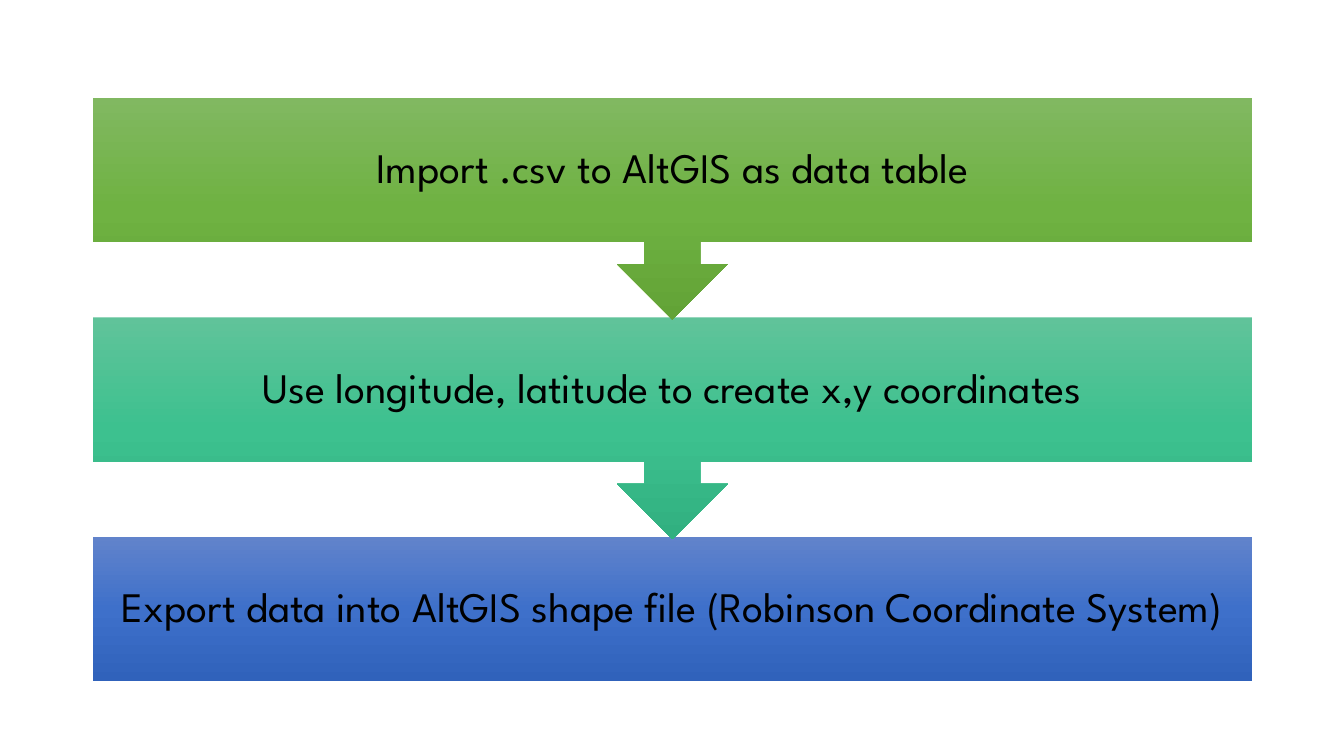
from copy import deepcopy

from pptx import Presentation
from pptx.dml.color import RGBColor
from pptx.enum.shapes import MSO_SHAPE
from pptx.enum.text import MSO_ANCHOR, PP_ALIGN
from pptx.oxml.ns import qn
from pptx.util import Inches, Pt

COLORS = {
    "green": ("81B861", "6FB242", "62A336"),
    "teal": ("60C39A", "3DC18F", "31B080"),
    "blue": ("6183CB", "3E70CA", "3062BB"),
    "text": "000000",
}
STEPS = [
    ("Import .csv to AltGIS as data table", "green"),
    ("Use longitude, latitude to create x,y coordinates", "teal"),
    ("Export data into AltGIS shape file (Robinson Coordinate System)", "blue"),
]
LEFT, TOP, WIDTH = 0.92, 0.97, 11.5
BOX_HEIGHT, CALLOUT_HEIGHT, PITCH = 1.43, 2.2, 2.18


def fill_gradient(shape, colors):
    """Fill from top to bottom with three evenly spaced colours."""
    shape.fill.gradient()
    shape.fill.gradient_angle = 270
    stop_list = shape._element.spPr.find(qn("a:gradFill")).find(qn("a:gsLst"))
    stop_list.append(deepcopy(stop_list[-1]))
    for index, stop in enumerate(shape.fill.gradient_stops):
        stop.position = index / 2
        stop.color.rgb = RGBColor.from_string(colors[index])


def write_text(shape, text, *, size, font, color, inset):
    frame = shape.text_frame
    frame.word_wrap = True
    frame.vertical_anchor = MSO_ANCHOR.MIDDLE
    frame.margin_left = frame.margin_right = Inches(inset)
    frame.margin_top = frame.margin_bottom = Inches(inset)
    para = frame.paragraphs[0]
    para.alignment = PP_ALIGN.CENTER
    para.line_spacing = 0.9
    span = para.add_run()
    span.text = text
    span.font.size = Pt(size)
    span.font.name = font
    span.font.color.rgb = RGBColor.from_string(color)


deck = Presentation()
deck.slide_width, deck.slide_height = Inches(13.33), Inches(7.5)
page = deck.slides.add_slide(deck.slide_layouts[6])

# Later steps lie behind, so each arrow tip overlaps the next box.
for row, (text, color) in reversed(list(enumerate(STEPS))):
    is_last = row == len(STEPS) - 1
    step = page.shapes.add_shape(
        MSO_SHAPE.RECTANGLE if is_last else MSO_SHAPE.DOWN_ARROW_CALLOUT,
        Inches(LEFT), Inches(TOP + row * PITCH),
        Inches(WIDTH), Inches(BOX_HEIGHT if is_last else CALLOUT_HEIGHT),
    )
    step.shadow.inherit = False
    step.line.fill.background()
    fill_gradient(step, COLORS[color])
    write_text(step, text, size=30, font="League Spartan", color=COLORS["text"], inset=0.23)

deck.save("out.pptx")
